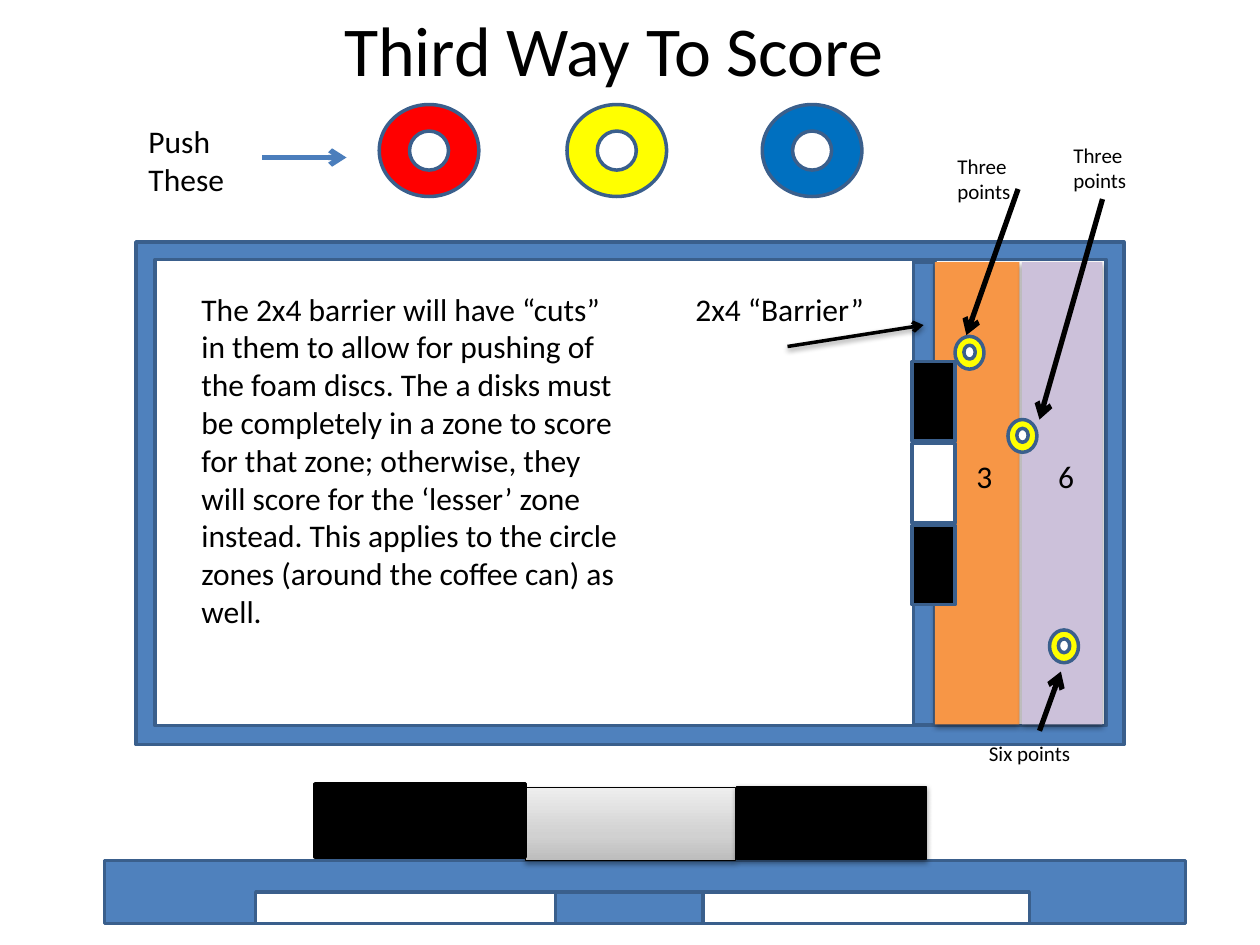
"""Build the "Third Way To Score" slide with its playing field, discs and barrier."""
from copy import deepcopy

from lxml.etree import SubElement
from pptx import Presentation
from pptx.dml.color import RGBColor as Rgb
from pptx.enum.shapes import MSO_CONNECTOR as Connector, MSO_SHAPE as Shape
from pptx.enum.text import MSO_AUTO_SIZE as AutoSize, PP_ALIGN as Align
from pptx.oxml.ns import qn
from pptx.util import Pt

PX = 9144
COLORS = {
    "black": "000000", "white": "FFFFFF", "wood": "4F81BD", "edge": "3A5F8C",
    "orange": "F79646", "lilac": "CCC1DA", "red": "FF0000", "yellow": "FFFF00",
    "blue": "0070C0", "arrow": "4B7EBC",
    "gray": "BDBDBD", "silver": "D1D1D1", "pale": "EEEEEE",
}
RGB = {name: Rgb.from_string(code) for name, code in COLORS.items()}

deck = Presentation()
deck.slide_width, deck.slide_height = 1000 * PX, 750 * PX
page = deck.slides.add_slide(deck.slide_layouts[6])


def draw(kind, place, fill, line="edge", width=2, shadow=False):
    shape = page.shapes.add_shape(kind, *(value * PX for value in place))
    shape.shadow.inherit = False
    shape.fill.solid()
    shape.fill.fore_color.rgb = RGB[fill]
    if line:
        shape.line.color.rgb = RGB[line]
        shape.line.width = Pt(width)
    else:
        shape.line.fill.background()
    if shadow:
        cast_shadow(shape._element.spPr.find(qn("a:effectLst")))
    return shape


def cast_shadow(effects):
    outer = SubElement(effects, qn("a:outerShdw"), blurRad="40000", dist="20000",
                       dir="5400000", rotWithShape="0")
    color = SubElement(outer, qn("a:srgbClr"), val=COLORS["black"])
    SubElement(color, qn("a:alpha"), val="38000")


draw(Shape.RECTANGLE, (108, 192, 784, 399), "wood")
draw(Shape.RECTANGLE, (123, 206, 755, 370), "white")
draw(Shape.RECTANGLE, (725, 208, 17, 367), "wood")
for left, width, fill in [(742, 67, "orange"), (811, 64, "lilac")]:
    draw(Shape.RECTANGLE, (left, 208, width, 367), fill, line=None, shadow=True)

large, small = (79, 73, 31, 31), (23, 26, 9, 11)
discs = [
    (301, 83, large, "red"), (450, 83, large, "yellow"), (605, 83, large, "blue"),
    (758, 267, small, "yellow"), (800, 333, small, "yellow"), (833, 500, small, "yellow"),
]
for left, top, (width, height, hole_width, hole_height), fill in discs:
    hole_left = left + (width - hole_width) // 2
    hole_top = top + (height - hole_height) // 2
    draw(Shape.OVAL, (left, top, width, height), fill)
    draw(Shape.OVAL, (hole_left, hole_top, hole_width, hole_height), "white")

for row, fill in enumerate(["black", "white", "black"]):
    draw(Shape.RECTANGLE, (724, 287 + 65 * row, 34, 63), fill)

draw(Shape.RECTANGLE, (83, 683, 858, 50), "wood")
middle = draw(Shape.RECTANGLE, (417, 625, 167, 58), "pale", "black", 0.75, True)
middle.fill.gradient()
middle.fill.gradient_angle = 90
first_stop = middle._element.spPr.find(".//" + qn("a:gs"))
first_stop.addnext(deepcopy(first_stop))
stops = [(0, "gray"), (0.35, "silver"), (1, "pale")]
for stop, (position, color) in zip(middle.fill.gradient_stops, stops):
    stop.position = position
    stop.color.rgb = RGB[color]
draw(Shape.RECTANGLE, (585, 624, 150, 58), "black", "black", 0.75, True)
draw(Shape.RECTANGLE, (250, 622, 167, 58), "black", "black")
draw(Shape.RECTANGLE, (203, 708, 614, 25), "white")
draw(Shape.RECTANGLE, (441, 708, 117, 25), "wood")

rules = (
    "The 2x4 barrier will have “cuts” in them to allow for pushing of the foam discs. "
    "The a disks must be completely in a zone to score for that zone; otherwise, they "
    "will score for the ‘lesser’ zone instead. This applies to the circle zones "
    "(around the coffee can) as well."
)
texts = [
    ("Third Way To Score", (58, 0, 858, 77), 40, Align.CENTER),
    ("Push These", (108, 92, 125, 71), 18, Align.LEFT),
    (rules, (150, 225, 355, 283), 18, Align.LEFT),
    ("2x4 “Barrier”", (542, 225, 175, 40), 18, Align.LEFT),
    ("3", (765, 358, 45, 40), 18, Align.LEFT),
    ("6", (830, 358, 45, 40), 18, Align.LEFT),
    ("Three points", (750, 117, 100, 50), 12, Align.LEFT),
    ("Three points", (842, 108, 100, 50), 12, Align.LEFT),
    ("Six points", (775, 583, 100, 30), 12, Align.LEFT),
]
for words, place, size, align in texts:
    box = page.shapes.add_textbox(*(value * PX for value in place))
    box.text_frame.word_wrap = True
    box.text_frame.auto_size = AutoSize.SHAPE_TO_FIT_TEXT
    para = box.text_frame.paragraphs[0]
    para.alignment = align
    span = para.add_run()
    span.text = words
    span.font.color.rgb = RGB["black"]
    for name, value in {"name": "Calibri", "size": Pt(size)}.items():
        setattr(span.font, name, value)

arrows = [
    ((208, 125, 275, 125), "arrow", 3, False),
    ((825, 580, 842, 533), "black", 3, False),
    ((875, 158, 825, 333), "black", 3, False),
    ((808, 150, 767, 266), "black", 3, False),
    ((625, 275, 733, 258), "black", 2, True),
]
for ends, color, width, shadow in arrows:
    arrow = page.shapes.add_connector(Connector.STRAIGHT, *(value * PX for value in ends))
    arrow.line.color.rgb = RGB[color]
    arrow.line.width = Pt(width)
    SubElement(arrow.line._get_or_add_ln(), qn("a:tailEnd"), type="arrow")
    effects = SubElement(arrow._element.spPr, qn("a:effectLst"))
    if shadow:
        cast_shadow(effects)

deck.save("out.pptx")
